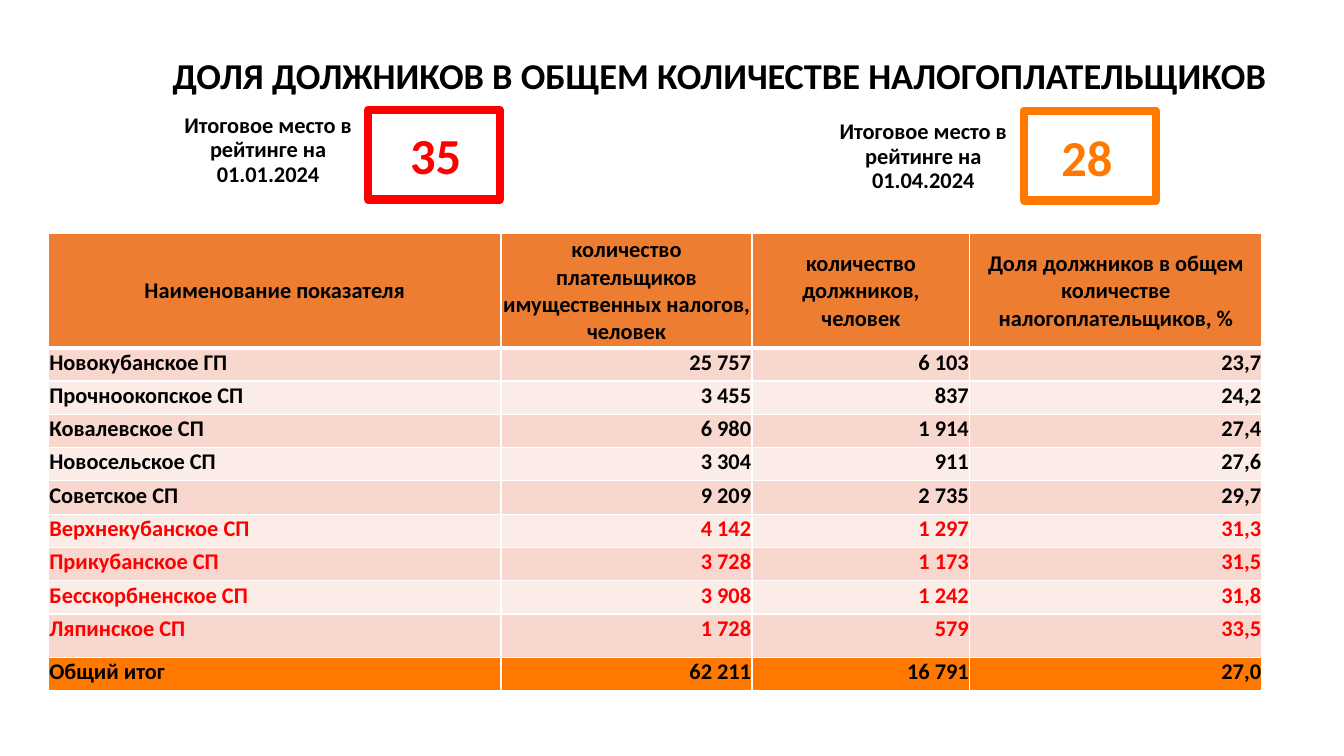
from lxml import etree
from pptx import Presentation
from pptx.dml.color import RGBColor
from pptx.enum.shapes import MSO_SHAPE
from pptx.enum.text import MSO_ANCHOR, MSO_AUTO_SIZE, PP_ALIGN
from pptx.oxml.ns import qn
from pptx.util import Pt

LEFT, CENTER, RIGHT = PP_ALIGN.LEFT, PP_ALIGN.CENTER, PP_ALIGN.RIGHT
TOP, MIDDLE = MSO_ANCHOR.TOP, MSO_ANCHOR.MIDDLE
NO_FIT, GROW = MSO_AUTO_SIZE.NONE, MSO_AUTO_SIZE.SHAPE_TO_FIT_TEXT
RECTANGLE = MSO_SHAPE.RECTANGLE

FONT = "Calibri"
BLACK, WHITE, RED, ORANGE = "000000", "FFFFFF", "FF0000", "FF7900"
HEADER_FILL, BAND_FILLS = "ED7D31", ("F8D7CE", "FCECE8")

COLUMN_WIDTHS = (323.3, 179.3, 155.5, 208.8)
HEADER_HEIGHT, ROW_HEIGHT, LAST_BAND_HEIGHT = 81.4, 23.8, 31
DEBTOR_LIMIT = 6  # settlements from this row on are shown in red

HEADERS = (
    "Наименование показателя",
    "количество плательщиков имущественных налогов, человек",
    "количество должников,\nчеловек",
    "Доля должников в общем количестве налогоплательщиков, %",
)
SETTLEMENTS = (
    ("Новокубанское ГП", "25 757", "6 103", "23,7"),
    ("Прочноокопское СП", "3 455", "837", "24,2"),
    ("Ковалевское СП", "6 980", "1 914", "27,4"),
    ("Новосельское СП", "3 304", "911", "27,6"),
    ("Советское СП", "9 209", "2 735", "29,7"),
    ("Верхнекубанское СП", "4 142", "1 297", "31,3"),
    ("Прикубанское СП", "3 728", "1 173", "31,5"),
    ("Бесскорбненское СП", "3 908", "1 242", "31,8"),
    ("Ляпинское СП", "1 728", "579", "33,5"),
)
TOTAL = ("Общий итог", "62 211", "16 791", "27,0")


def rgb(color):
    return RGBColor.from_string(color)


def write(frame, text, size, color, align, spacing=None):
    frame.text = text
    for paragraph in frame.paragraphs:
        paragraph.alignment = align
        if spacing:
            paragraph.line_spacing = spacing
        font = paragraph.font
        font.name, font.size, font.bold = FONT, Pt(size), True
        font.color.rgb = rgb(color)


def add_title(slide, text):
    title = slide.shapes.title
    title.left, title.top, title.width, title.height = Pt(94.3), Pt(25.2), Pt(840.2), Pt(61.2)
    frame = title.text_frame
    frame.auto_size, frame.vertical_anchor = NO_FIT, MIDDLE
    write(frame, text, 26, BLACK, CENTER, 0.9)


def add_text(slide, box, text, size, color, align, anchor, fit, spacing=None):
    frame = slide.shapes.add_textbox(*map(Pt, box)).text_frame
    frame.word_wrap = True
    frame.auto_size, frame.vertical_anchor = fit, anchor
    write(frame, text, size, color, align, spacing)


def add_rank(slide, date, rank, color, label_box, rank_box, frame_left, frame_top):
    add_text(slide, label_box, f"Итоговое место в рейтинге на {date}",
             16, BLACK, CENTER, MIDDLE, NO_FIT, 0.9)
    add_text(slide, rank_box, rank, 36, color, LEFT, TOP, GROW)
    border = slide.shapes.add_shape(RECTANGLE, Pt(frame_left), Pt(frame_top), Pt(94.3), Pt(64.1))
    border.shadow.inherit = False
    border.fill.background()
    border.line.color.rgb = rgb(color)
    border.line.width = Pt(6)


def add_cell_borders(cell, top, bottom):
    properties = cell._tc.get_or_add_tcPr()
    for side, width in (("L", 1), ("R", 1), ("T", top), ("B", bottom)):
        line = etree.SubElement(properties, qn(f"a:ln{side}"), w=str(Pt(width)))
        fill = etree.SubElement(line, qn("a:solidFill"))
        etree.SubElement(fill, qn("a:srgbClr"), val=WHITE)


def format_cell(cell, text, color, fill, align, anchor, top=1, bottom=1):
    cell.margin_left = cell.margin_right = cell.margin_top = Pt(0.7)
    cell.margin_bottom = 0
    cell.vertical_anchor = anchor
    write(cell.text_frame, text, 16, color, align)
    add_cell_borders(cell, top, bottom)
    cell.fill.solid()
    cell.fill.fore_color.rgb = rgb(fill)


def add_debtor_table(slide):
    records = (*SETTLEMENTS, TOTAL)
    total_row = len(records)
    heights = [HEADER_HEIGHT] + [ROW_HEIGHT] * total_row
    heights[total_row - 1] = LAST_BAND_HEIGHT
    table = slide.shapes.add_table(
        len(heights), len(HEADERS), Pt(34.6), Pt(167),
        Pt(sum(COLUMN_WIDTHS)), Pt(sum(heights))).table
    for column, width in zip(table.columns, COLUMN_WIDTHS):
        column.width = Pt(width)
    for row, height in zip(table.rows, heights):
        row.height = Pt(height)

    # Header row
    for column, header in enumerate(HEADERS):
        format_cell(table.cell(0, column), header, BLACK, HEADER_FILL, CENTER, MIDDLE, bottom=3)

    # Settlements and total
    for row, record in enumerate(records, 1):
        is_total = row == total_row
        color = RED if row >= DEBTOR_LIMIT and not is_total else BLACK
        fill = ORANGE if is_total else BAND_FILLS[(row - 1) % 2]
        for column, value in enumerate(record):
            format_cell(table.cell(row, column), value, color, fill,
                        RIGHT if column else LEFT, TOP, top=3 if row == 1 else 1)


def main():
    presentation = Presentation()
    presentation.slide_width, presentation.slide_height = Pt(960), Pt(540)
    slide = presentation.slides.add_slide(presentation.slide_layouts[5])

    add_title(slide, "ДОЛЯ ДОЛЖНИКОВ В ОБЩЕМ КОЛИЧЕСТВЕ НАЛОГОПЛАТЕЛЬЩИКОВ")
    add_debtor_table(slide)
    add_rank(slide, "01.01.2024", "35", RED,
             (105.8, 77, 171.4, 61.2), (285.8, 85, 63.4, 51.1), 262.8, 78.5)
    add_rank(slide, "01.04.2024", "28", ORANGE,
             (579.6, 81.4, 159.8, 61.2), (751, 86.4, 63.4, 51.1), 731.5, 79.2)

    presentation.save("out.pptx")


if __name__ == "__main__":
    main()
